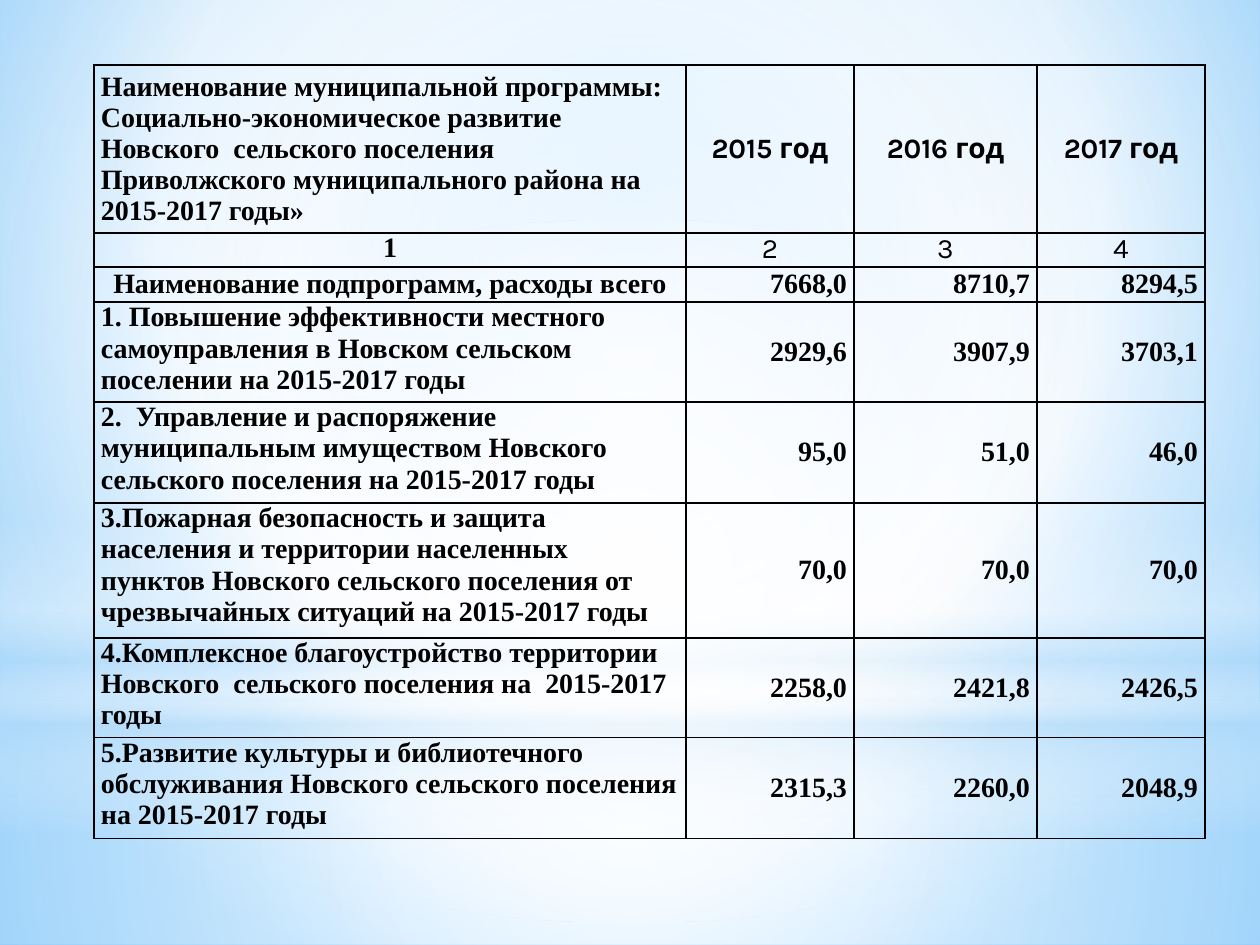
"""Build the slide with the table of municipal programme spending."""
from lxml.etree import SubElement
from pptx import Presentation
from pptx.dml.color import RGBColor
from pptx.enum.shapes import MSO_SHAPE
from pptx.enum.text import MSO_ANCHOR, PP_ALIGN
from pptx.oxml.ns import qn
from pptx.util import Pt

PX = 914400 // 126
WIDE, HIGH = 1260, 945
BLACK = RGBColor(0, 0, 0)
WHITE = RGBColor(255, 255, 255)
SKY = RGBColor(0xB4, 0xDC, 0xFA)
PALE = RGBColor(0x9E, 0xD5, 0xFF)
BLUE = RGBColor(0x5B, 0xB9, 0xFF)
SERIF, SANS = "Times New Roman", "Karla"

LEFT, TOP = 94, 65
COLS = [592, 168, 183, 168]
ROWS = [168, 34, 35, 100, 101, 135, 100, 101]
DATA = [
    ("Наименование муниципальной программы: Социально-экономическое развитие "
     "Новского  сельского поселения Приволжского муниципального района на 2015-2017 годы»",
     "2015 год", "2016 год", "2017 год"),
    ("1", "2", "3", "4"),
    ("Наименование подпрограмм, расходы всего", "7668,0", "8710,7", "8294,5"),
    ("1. Повышение эффективности местного самоуправления в Новском сельском "
     "поселении на 2015-2017 годы", "2929,6", "3907,9", "3703,1"),
    ("2.  Управление и распоряжение муниципальным имуществом Новского "
     "сельского поселения на 2015-2017 годы", "95,0", "51,0", "46,0"),
    ("3.Пожарная безопасность и защита населения и территории населенных пунктов "
     "Новского сельского поселения от чрезвычайных ситуаций на 2015-2017 годы",
     "70,0", "70,0", "70,0"),
    ("4.Комплексное благоустройство территории Новского  сельского поселения "
     "на  2015-2017 годы", "2258,0", "2421,8", "2426,5"),
    ("5.Развитие культуры и библиотечного обслуживания Новского сельского "
     "поселения на 2015-2017 годы", "2315,3", "2260,0", "2048,9"),
]

BACK = [(0, PALE, 100), (60, WHITE, 100), (100, BLUE, 100)]
MID = (50, 50, 50, 50)
GLOWS = [
    (MSO_SHAPE.RECTANGLE, 703, 242, MID,
     [(0, WHITE, 91), (37, WHITE, 76), (100, SKY, 79)]),
    (MSO_SHAPE.RECTANGLE, 0, 703, MID,
     [(0, WHITE, 89), (48, WHITE, 62), (100, SKY, 79)]),
    (MSO_SHAPE.RECTANGLE, 519, 315, None,
     [(0, WHITE, 0), (29, WHITE, 30), (45, SKY, 40),
      (55, WHITE, 26), (65, SKY, 60), (100, WHITE, 0)]),
    (MSO_SHAPE.OVAL, 220, 703, MID, [(0, WHITE, 100), (56, WHITE, 0)]),
]


def add(parent, tag, **attrs):
    return SubElement(parent, qn(tag), {k: str(v) for k, v in attrs.items()})


def shade(fill, owner, stops, focus):
    fill.gradient()
    grad = owner.find(".//" + qn("a:gradFill"))
    for child in list(grad):
        grad.remove(child)
    group = add(grad, "a:gsLst")
    for place, color, alpha in stops:
        stop = add(group, "a:gs", pos=place * 1000)
        tint = add(stop, "a:srgbClr", val=color)
        if alpha < 100:
            add(tint, "a:alpha", val=alpha * 1000)
    if focus:
        sides = {k: v * 1000 for k, v in zip("ltrb", focus)}
        add(add(grad, "a:path", path="circle"), "a:fillToRect", **sides)
    else:
        add(grad, "a:lin", ang=90 * 60000, scaled=0)


def write(cell, text, font=SERIF, bold=True, align=PP_ALIGN.LEFT, anchor=MSO_ANCHOR.MIDDLE):
    cell.margin_left = cell.margin_right = 7 * PX
    cell.margin_top = cell.margin_bottom = 0
    cell.vertical_anchor = anchor
    para = cell.text_frame.paragraphs[0]
    para.alignment = align
    run = para.add_run()
    run.text = text
    run.font.name, run.font.size, run.font.bold = font, Pt(16), bold
    run.font.color.rgb = BLACK


def frame(cell):
    props = cell._tc.get_or_add_tcPr()
    for side in ("L", "R", "T", "B"):
        line = add(props, "a:ln" + side, w=Pt(1))
        add(add(line, "a:solidFill"), "a:srgbClr", val=BLACK)
    cell.fill.background()


def style(row, col):
    if row == 0:
        return dict(font=SANS, align=PP_ALIGN.CENTER) if col else {}
    if row == 1:
        return dict(font=SANS if col else SERIF, bold=not col,
                    align=PP_ALIGN.CENTER, anchor=MSO_ANCHOR.TOP)
    if col:
        return dict(align=PP_ALIGN.RIGHT)
    return dict(align=PP_ALIGN.CENTER) if row == 2 else dict(anchor=MSO_ANCHOR.TOP)


def main():
    deck = Presentation()
    deck.slide_width, deck.slide_height = WIDE * PX, HIGH * PX
    slide = deck.slides.add_slide(deck.slide_layouts[6])
    shade(slide.background.fill, slide.element, BACK, (20, 10, 20, 60))

    for kind, top, high, focus, stops in GLOWS:
        glow = slide.shapes.add_shape(kind, 0, top * PX, WIDE * PX, high * PX)
        glow.shadow.inherit = False
        glow.line.fill.background()
        shade(glow.fill, glow.element, stops, focus)

    table = slide.shapes.add_table(len(ROWS), len(COLS), LEFT * PX, TOP * PX,
                                   sum(COLS) * PX, sum(ROWS) * PX).table
    table.first_row = table.horz_banding = False
    for col, wide in zip(table.columns, COLS):
        col.width = wide * PX
    for r, (high, texts) in enumerate(zip(ROWS, DATA)):
        table.rows[r].height = high * PX
        for c, text in enumerate(texts):
            cell = table.cell(r, c)
            write(cell, text, **style(r, c))
            frame(cell)

    deck.save("out.pptx")


if __name__ == "__main__":
    main()
